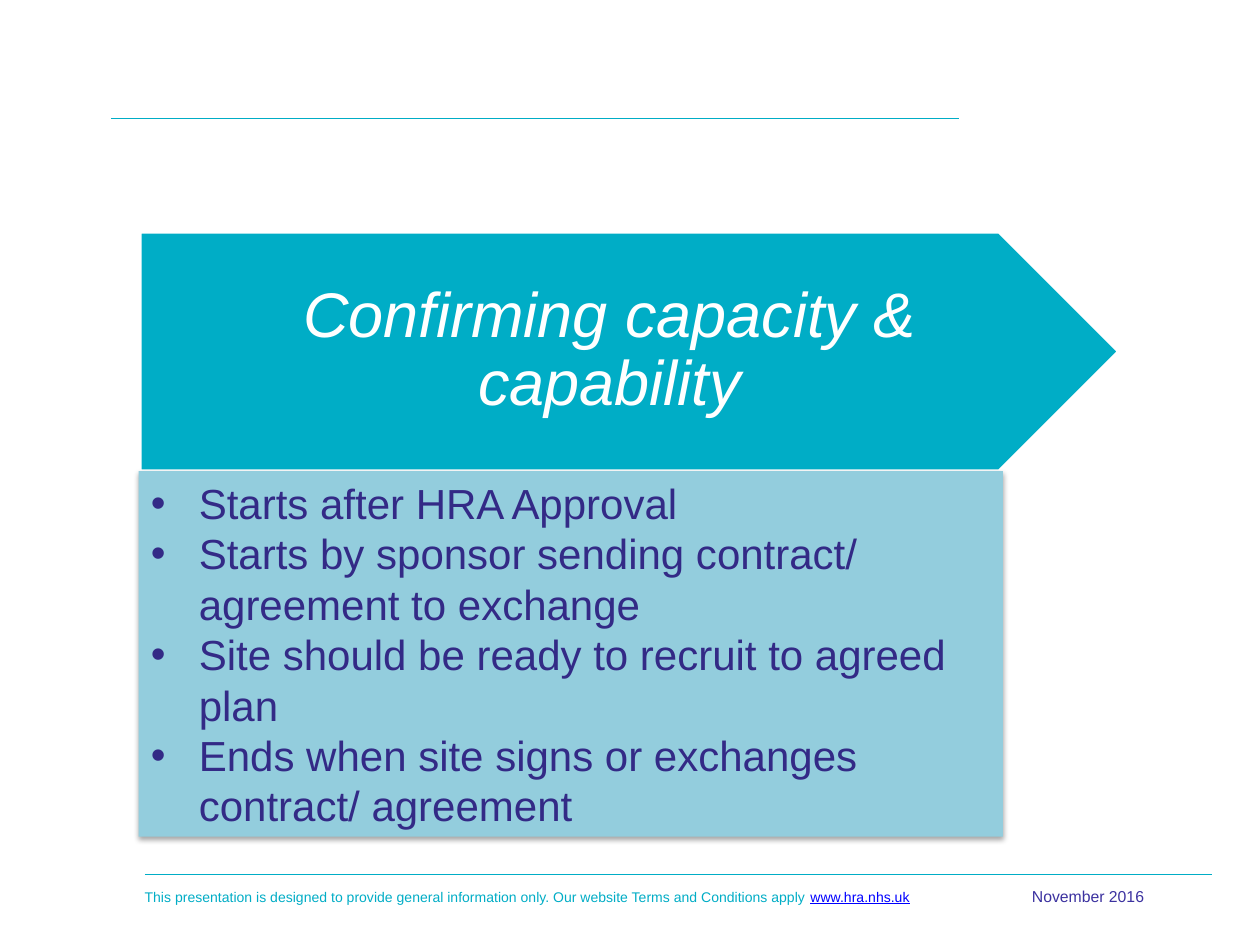
from lxml import etree
from pptx import Presentation
from pptx.dml.color import RGBColor
from pptx.enum.shapes import MSO_CONNECTOR as CONN, MSO_SHAPE as SHAPE
from pptx.enum.text import MSO_ANCHOR as ANCHOR, MSO_AUTO_SIZE as AUTO, PP_ALIGN as ALIGN
from pptx.oxml import parse_xml
from pptx.oxml.ns import nsdecls, qn
from pptx.util import Inches, Pt

TEAL = RGBColor(0x00, 0xAD, 0xC6)
PALE_BLUE = RGBColor(0x93, 0xCD, 0xDD)
INDIGO = RGBColor(0x33, 0x2A, 0x86)
VIOLET = RGBColor(0x3C, 0x32, 0xA0)
LINK_BLUE = RGBColor(0x00, 0x00, 0xFF)
WHITE = RGBColor(0xFF, 0xFF, 0xFF)

SOFT_SHADOW = (
    f'<a:effectLst {nsdecls("a")}>'
    '<a:outerShdw blurRad="40000" dist="23000" dir="5400000" rotWithShape="0">'
    '<a:srgbClr val="000000"><a:alpha val="35000"/></a:srgbClr>'
    '</a:outerShdw></a:effectLst>'
)


class SlideBuilder:
    font_name = "Arial"
    hanging = Inches(0.38)

    def __init__(self, slide):
        self.s = slide

    def rule(self, left, right, y):
        line = self.s.shapes.add_connector(
            CONN.STRAIGHT, Inches(left), Inches(y), Inches(right), Inches(y))
        line.line.color.rgb = TEAL
        line.line.width = Pt(1)
        etree.SubElement(line._element.spPr, qn("a:effectLst"))

    def shape(self, kind, box, fill):
        sp = self.s.shapes.add_shape(kind, *map(Inches, box))
        sp.shadow.inherit = False
        sp.fill.solid()
        sp.fill.fore_color.rgb = fill
        sp.line.fill.background()
        sp.text_frame.word_wrap = True
        return sp

    def text_box(self, box):
        sp = self.s.shapes.add_textbox(*map(Inches, box))
        sp.text_frame.word_wrap = True
        return sp

    def soft_shadow(self, sp):
        spPr = sp._element.spPr
        spPr.replace(spPr.find(qn("a:effectLst")), parse_xml(SOFT_SHADOW))

    def run(self, p, text, color, **formats):
        r = p.add_run()
        r.text = text
        r.font.color.rgb = color
        for name, value in {"name": self.font_name, **formats}.items():
            setattr(r.font, name, value)

    def bullets(self, tf, items, color, size):
        for i, item in enumerate(items):
            p = tf.add_paragraph() if i else tf.paragraphs[0]
            p.alignment = ALIGN.LEFT
            pPr = p._p.get_or_add_pPr()
            pPr.set("marL", str(self.hanging))
            pPr.set("indent", str(-self.hanging))
            etree.SubElement(pPr, qn("a:buFont"), typeface=self.font_name)
            etree.SubElement(pPr, qn("a:buChar"), char="•")
            self.run(p, item, color, size=size)


def main():
    prs = Presentation()
    prs.slide_width, prs.slide_height = Inches(10), Inches(7.5)
    b = SlideBuilder(prs.slides.add_slide(prs.slide_layouts[6]))

    b.rule(0.88, 7.61, 0.94)
    b.rule(1.15, 9.62, 6.94)

    footer = b.text_box((1.05, 7, 6.36, 0.24)).text_frame
    footer.auto_size = AUTO.SHAPE_TO_FIT_TEXT
    p = footer.paragraphs[0]
    b.run(p, "This presentation is designed to provide general information only. "
          "Our website Terms and Conditions apply ", TEAL, size=Pt(8))
    b.run(p, "www.hra.nhs.uk", LINK_BLUE, size=Pt(8), underline=True)

    arrow = b.shape(SHAPE.PENTAGON, (1.11, 1.84, 7.77, 1.9), TEAL)
    arrow.line.color.rgb = WHITE
    arrow.line.width = Pt(2)
    tf = arrow.text_frame
    arrow_format = {
        "vertical_anchor": ANCHOR.MIDDLE,
        "margin_left": Inches(0.21), "margin_right": Inches(0.05),
        "margin_top": Inches(0.1), "margin_bottom": Inches(0.1),
    }
    for name, value in arrow_format.items():
        setattr(tf, name, value)
    p = tf.paragraphs[0]
    p.alignment = ALIGN.CENTER
    p.line_spacing = 0.9
    b.run(p, "Confirming capacity & capability", WHITE, size=Pt(36), italic=True)

    panel = b.shape(SHAPE.RECTANGLE, (1.1, 3.74, 6.86, 2.9), PALE_BLUE)
    b.soft_shadow(panel)
    panel.text_frame.vertical_anchor = ANCHOR.MIDDLE
    b.bullets(panel.text_frame, [
        "Starts after HRA Approval",
        "Starts by sponsor sending contract/ agreement to exchange",
        "Site should be ready to recruit to agreed plan",
        "Ends when site signs or exchanges contract/ agreement",
    ], INDIGO, Pt(24))

    p = b.text_box((7.63, 6.99, 2.01, 0.4)).text_frame.paragraphs[0]
    p.alignment = ALIGN.CENTER
    b.run(p, "November 2016", VIOLET, size=Pt(9))

    prs.save("out.pptx")


if __name__ == "__main__":
    main()
